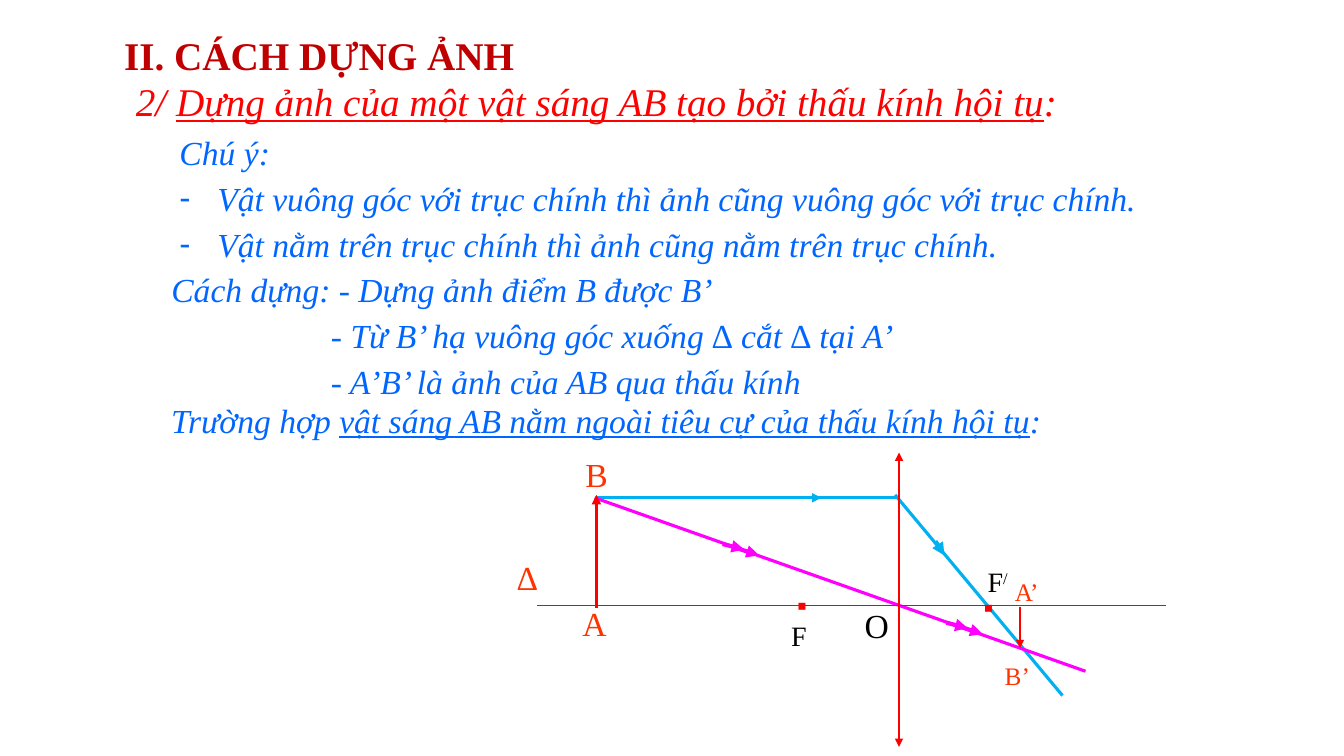
from dataclasses import dataclass, field

from lxml.etree import SubElement
from pptx import Presentation
from pptx.dml.color import RGBColor
from pptx.enum.shapes import MSO_CONNECTOR as Connector
from pptx.enum.text import MSO_ANCHOR as Anchor, MSO_AUTO_SIZE as AutoSize, PP_ALIGN as Align
from pptx.oxml.ns import qn
from pptx.util import Pt

FONT = "Times New Roman"
RED, DARK_RED, ORANGE = "FF0000", "C00000", "FF3300"
BLUE, CYAN, MAGENTA, BLACK = "0066FF", "00B0F0", "FF00FF", "000000"

# Optical layout, in points
AXIS_Y, LENS_X = 432.6, 642.2
OBJECT_X, OBJECT_TOP = 426, 355.6


@dataclass
class Span:
    text: str
    format: dict = field(default_factory=dict)
    superscript: bool = False


@dataclass
class Para:
    spans: list[Span]
    bullet: str = ""
    margin: float = 0
    hanging: float = 0
    before: float = 0


@dataclass
class Block:
    left: float
    top: float
    width: float
    height: float
    size: float
    color: str
    paras: list[Para]
    format: dict = field(default_factory=dict)


@dataclass
class Ray:
    start: tuple[float, float]
    end: tuple[float, float]
    color: str
    width: float
    arrows: tuple[str, ...] = ()


def rgb(value: str) -> RGBColor:
    return RGBColor.from_string(value)


def line_of(*spans: Span) -> list[Para]:
    return [Para(list(spans))]


def label(text: str, left: float, top: float, width: float, size: float,
          color: str, mark: str = "") -> Block:
    spans = [Span(text)] + ([Span(mark, superscript=True)] if mark else [])
    return Block(left, top, width, size * 1.2 + 7.2, size, color, line_of(*spans))


def fill_box(box, block: Block) -> None:
    for name in ("left", "top", "width", "height"):
        setattr(box, name, Pt(getattr(block, name)))
    frame = box.text_frame
    settings = {"word_wrap": True, "auto_size": AutoSize.NONE, "vertical_anchor": Anchor.TOP}
    for name, value in settings.items():
        setattr(frame, name, value)
    for index, item in enumerate(block.paras):
        para = frame.add_paragraph() if index else frame.paragraphs[0]
        layout = {"alignment": Align.LEFT, "space_before": Pt(item.before),
                  "space_after": Pt(0), "line_spacing": 1.0}
        for name, value in layout.items():
            setattr(para, name, value)
        properties = para._p.get_or_add_pPr()
        properties.set("marL", str(Pt(item.margin)))
        properties.set("indent", str(Pt(-item.hanging)))
        if item.bullet:
            SubElement(properties, qn("a:buChar")).set("char", item.bullet)
        else:
            SubElement(properties, qn("a:buNone"))
        for part in item.spans:
            span = para.add_run()
            span.text = part.text
            font = {"name": FONT, "size": Pt(block.size), **block.format, **part.format}
            for name, value in font.items():
                setattr(span.font, name, value)
            span.font.color.rgb = rgb(block.color)
            if part.superscript:
                span._r.get_or_add_rPr().set("baseline", "30000")


def draw_ray(page, ray: Ray) -> None:
    points = [Pt(value) for value in (*ray.start, *ray.end)]
    connector = page.shapes.add_connector(Connector.STRAIGHT, *points)
    connector.line.color.rgb = rgb(ray.color)
    connector.line.width = Pt(ray.width)
    outline = connector.line._get_or_add_ln()
    for end in ray.arrows:
        SubElement(outline, qn(f"a:{end}")).set("type", "triangle")
    SubElement(connector._element.spPr, qn("a:effectLst"))


ITALIC = {"italic": True}
UNDERLINE = {"underline": True}
TAIL = ("tailEnd",)

TITLE = Block(81.4, 18.7, 873, 41, 28, DARK_RED,
              line_of(Span("II. CÁCH DỰNG ẢNH")), {"bold": True})

NOTES = Block(121, 90.7, 720, 101, 24, BLUE, [
    Para([Span("Chú ý:")], before=4),
    *(Para([Span(text)], "-", 27, 27, 4) for text in (
        "Vật vuông góc với trục chính thì ảnh cũng vuông góc với trục chính.",
        "Vật nằm trên trục chính thì ảnh cũng nằm trên trục chính.")),
], ITALIC)

STEPS = Block(115.2, 188.6, 729, 101, 24, BLUE, [
    Para([Span("Cách dựng: - Dựng ảnh điểm B được B’")], before=4),
    *(Para([Span(text)], margin=114, before=4) for text in (
        "- Từ B’ hạ vuông góc xuống ∆ cắt ∆ tại A’",
        "- A’B’ là ảnh của AB qua thấu kính")),
], ITALIC)

HEADINGS = [
    Block(90, 51.8, 720, 41, 28, RED, line_of(
        Span("2/ "),
        Span("Dựng ảnh của một vật sáng AB tạo bởi thấu kính hội tụ", UNDERLINE),
        Span(":")), ITALIC),
    Block(115.2, 282.2, 757, 36, 24, BLUE, line_of(
        Span("Trường hợp "),
        Span("vật sáng AB nằm ngoài tiêu cự của thấu kính hội tụ", UNDERLINE),
        Span(":")), ITALIC),
]

RAYS = [
    # Ray parallel to the axis, then through the focus
    Ray((OBJECT_X, OBJECT_TOP), (LENS_X, OBJECT_TOP), CYAN, 2.25),
    Ray((565.2, OBJECT_TOP), (586.8, OBJECT_TOP), CYAN, 2.25, TAIL),
    Ray((639.4, 353.5), (758.9, 496.8), CYAN, 2.25),
    Ray((668.2, 386.6), (674.6, 396.7), CYAN, 3, TAIL),
    # Ray through the optical centre, with a double arrow on each side
    Ray((424.8, OBJECT_TOP), (775.4, 479.5), MAGENTA, 2.25),
    *(Ray((x + dx, y + dy), (x + dx + 15.3, y + dy + rise), MAGENTA, 3, TAIL)
      for x, y in ((516.2, 388.6), (676, 444.8))
      for dx, dy, rise in ((0, 0, 3.9), (10.6, 3.1, 5))),
    # Image, lens, axis and object
    Ray((728.6, 433.4), (728.6, 463), RED, 0.75, TAIL),
    Ray((LENS_X, 323.3), (LENS_X, 533.5), RED, 1, ("headEnd", "tailEnd")),
    Ray((383.8, AXIS_Y), (833, AXIS_Y), RED, 0.75),
    Ray((OBJECT_X, 434.2), (OBJECT_X, 353.5), RED, 2.25, TAIL),
]

LABELS = [
    label("B’", 710.6, 468, 84, 18, ORANGE),
    label("A’", 717.8, 408.2, 78, 18, ORANGE),
    label("▪", 562.3, 416.2, 96, 20, RED),
    label("▪", 695.5, 417.6, 96, 20, RED),
    label("F", 558, 438.5, 29, 20, BLACK),
    label("F", 698.4, 399.6, 61, 20, BLACK, "/"),
    label("O", 610.6, 428.4, 36, 24, BLACK),
    label("A", 409, 427, 102, 24, ORANGE),
    label("B", 411.1, 320.4, 102, 24, ORANGE),
    label("∆", 362.2, 394.6, 51, 24, ORANGE),
]


def main() -> None:
    deck = Presentation()
    deck.slide_width, deck.slide_height = Pt(960), Pt(540)
    page = deck.slides.add_slide(deck.slide_layouts[3])

    # Title and the two lists
    for holder, block in zip(page.placeholders, (TITLE, NOTES, STEPS)):
        fill_box(holder, block)

    # Ray diagram
    for ray in RAYS:
        draw_ray(page, ray)

    # Headings and diagram labels
    for block in HEADINGS + LABELS:
        fill_box(page.shapes.add_textbox(0, 0, 0, 0), block)

    deck.save("out.pptx")


if __name__ == "__main__":
    main()
